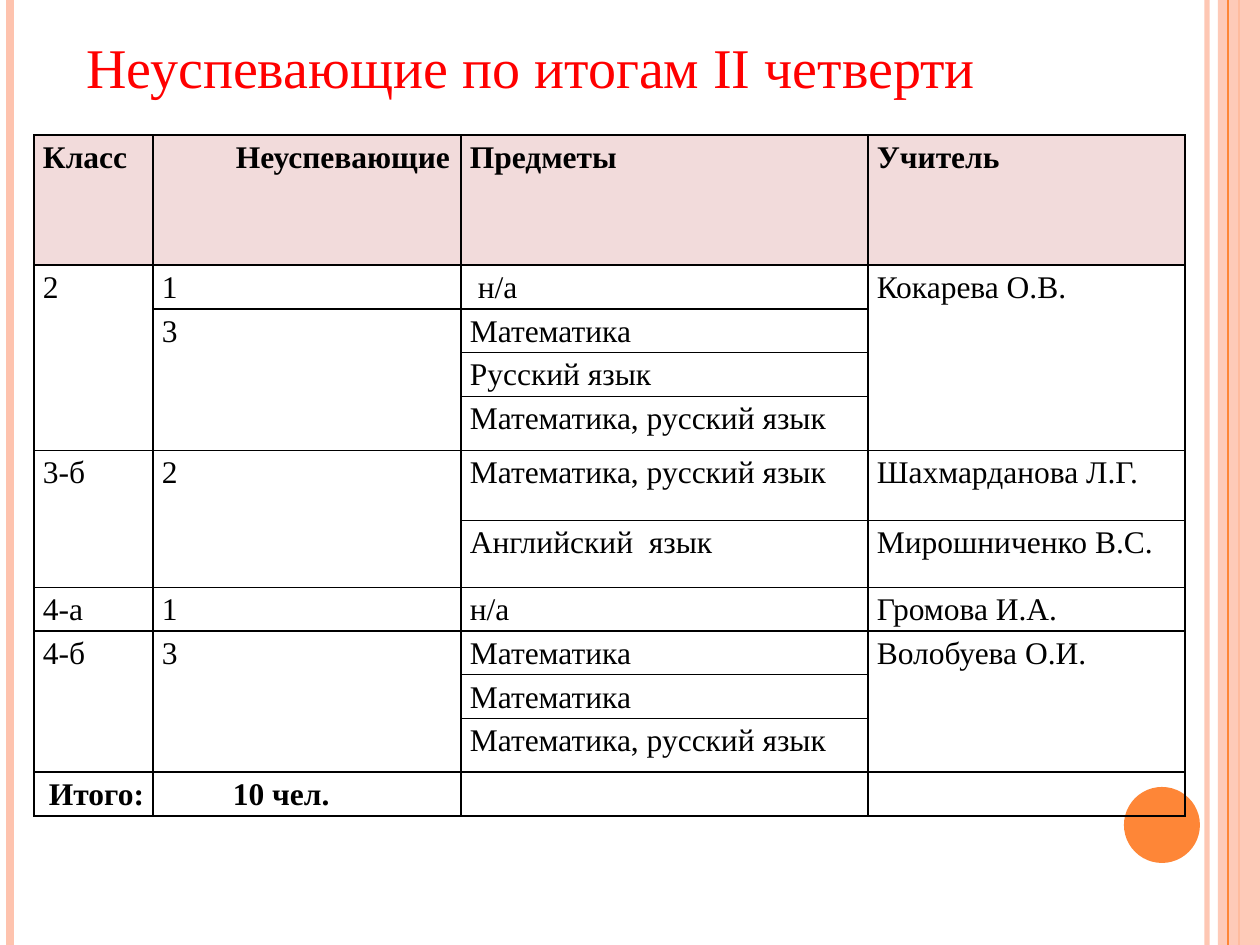
from lxml import etree
from pptx import Presentation
from pptx.dml.color import RGBColor
from pptx.enum.shapes import MSO_CONNECTOR, MSO_SHAPE
from pptx.enum.text import PP_ALIGN
from pptx.oxml.ns import qn
from pptx.util import Pt

PX = 914400 // 126
STRAIGHT = MSO_CONNECTOR.STRAIGHT
RECTANGLE, OVAL = MSO_SHAPE.RECTANGLE, MSO_SHAPE.OVAL
JUSTIFY, RIGHT = PP_ALIGN.JUSTIFY, PP_ALIGN.RIGHT
FONT = "Times New Roman"
ORANGE, PEACH, BLACK = "FE8637", "FEC3AE", "000000"


def paint(fill, color, opacity=100):
    fill.solid()
    fill.fore_color.rgb = RGBColor.from_string(color)
    if opacity < 100:
        srgb = fill._xPr.find(".//" + qn("a:srgbClr"))
        etree.SubElement(srgb, qn("a:alpha"), val=str(opacity * 1000))


def add_borders(cell):
    """Draw a thin black line on all four sides of the cell."""
    properties = cell._tc.get_or_add_tcPr()
    for index, side in enumerate(("a:lnL", "a:lnR", "a:lnT", "a:lnB")):
        border = etree.Element(qn(side), w=str(Pt(1)))
        solid = etree.SubElement(border, qn("a:solidFill"))
        etree.SubElement(solid, qn("a:srgbClr"), val=BLACK)
        properties.insert(index, border)


prs = Presentation()
prs.slide_width, prs.slide_height = 1260 * PX, 945 * PX
slide = prs.slides.add_slide(prs.slide_layouts[6])
shapes = slide.shapes

# Side stripes, band and corner circle, from back to front;
# stripes have a line width in points, the others none
decorations = [
    (STRAIGHT, (1207, 0, 0, 945), PEACH, 93, 3),
    (STRAIGHT, (10, 0, 0, 945), PEACH, 100, 4.5),
    (STRAIGHT, (1239, 0, 0, 945), ORANGE, 100, 1.5),
    (RECTANGLE, (1218, 0, 42, 945), PEACH, 87, None),
    (STRAIGHT, (1228, 0, 0, 945), ORANGE, 100, 0.75),
    (OVAL, (1124, 787, 76, 76), ORANGE, 100, None),
]
for kind, box, color, opacity, line_width in decorations:
    x, y, width, height = [side * PX for side in box]
    if line_width:
        stripe = shapes.add_connector(kind, x, y, x + width, y + height)
        stripe.line.width = Pt(line_width)
        paint(stripe.line.fill, color, opacity)
        etree.SubElement(stripe._element.spPr, qn("a:effectLst"))
    else:
        decoration = shapes.add_shape(kind, x, y, width, height)
        decoration.shadow.inherit = False
        paint(decoration.fill, color, opacity)
        decoration.line.fill.background()

# Title
title = shapes.add_textbox(74 * PX, 26 * PX, 924 * PX, 81 * PX)
title.text_frame.word_wrap = False
title.text_frame.text = "Неуспевающие по итогам II четверти"
title_font = title.text_frame.paragraphs[0].runs[0].font
title_font.name, title_font.size = FONT, Pt(32)
paint(title_font.fill, "FF0000")

# Table of pupils; None marks a cell covered by the merged cell above it
rows = [
    ("Класс", "Неуспевающие", "Предметы", "Учитель"),
    ("2", "1", "н/а", "Кокарева О.В."),
    (None, "3", "Математика", None),
    (None, None, "Русский язык", None),
    (None, None, "Математика, русский язык", None),
    ("3-б", "2", "Математика, русский язык", "Шахмарданова Л.Г."),
    (None, None, "Английский  язык", "Мирошниченко В.С."),
    ("4-а", "1", "н/а", "Громова И.А."),
    ("4-б", "3", "Математика", "Волобуева О.И."),
    (None, None, "Математика", None),
    (None, None, "Математика, русский язык", None),
    ("Итого:", "10 чел.", "", ""),
]
column_widths = [119, 308, 407, 317]
row_heights = [130, 44, 43, 44, 54, 70, 67, 43, 44, 43, 54, 44]
indents = {(0, 1): 74, (1, 2): 8, (11, 1): 71}
last_row = len(rows) - 1

table = shapes.add_table(
    len(rows), len(column_widths), 34 * PX, 135 * PX,
    sum(column_widths) * PX, sum(row_heights) * PX).table
table.first_row = table.horz_banding = False
for column, width in zip(table.columns, column_widths):
    column.width = width * PX
for row, height in zip(table.rows, row_heights):
    row.height = height * PX

for r, texts in enumerate(rows):
    for c, text in enumerate(texts):
        cell = table.cell(r, c)
        cell.margin_left = cell.margin_right = 9 * PX
        cell.margin_top = cell.margin_bottom = 0
        if r == 0:
            paint(cell.fill, "F2DBDB")
        else:
            cell.fill.background()
        add_borders(cell)
        if text is None:
            continue

        bottom = r
        while bottom < last_row and rows[bottom + 1][c] is None:
            bottom += 1
        if bottom > r:
            cell.merge(table.cell(bottom, c))

        paragraph = cell.text_frame.paragraphs[0]
        paragraph.text = text
        paragraph.line_spacing = 1.15
        if (r, c) in indents:
            paragraph._p.get_or_add_pPr().set("marL", str(indents[r, c] * PX))
        if c == 2 and 0 < r < last_row:
            paragraph.alignment = JUSTIFY
        elif c == 0 and r == last_row:
            paragraph.alignment = RIGHT
        for run in paragraph.runs:
            run.font.name, run.font.size = FONT, Pt(18)
            run.font.bold = r in (0, last_row)
            paint(run.font.fill, BLACK)

prs.save("out.pptx")
